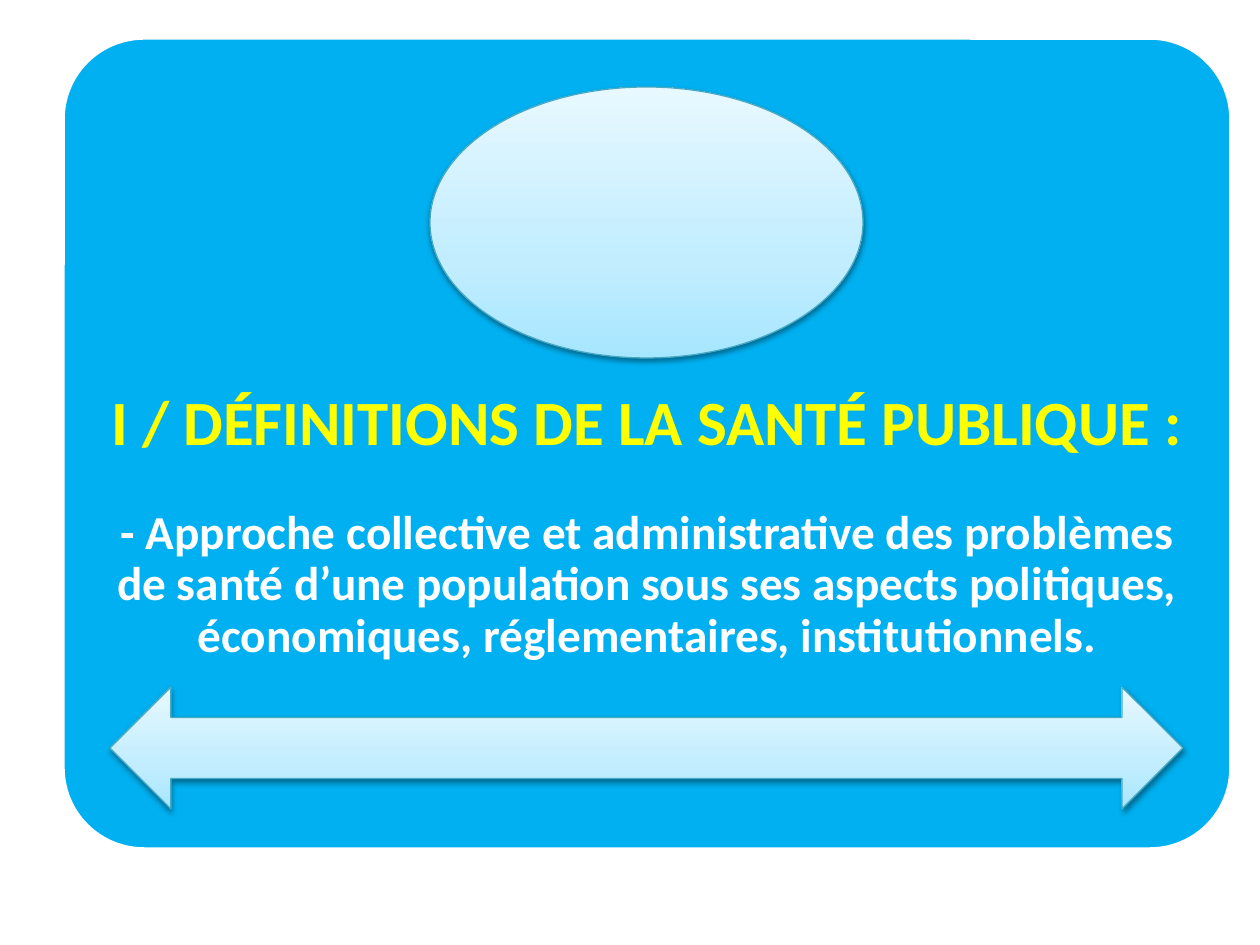
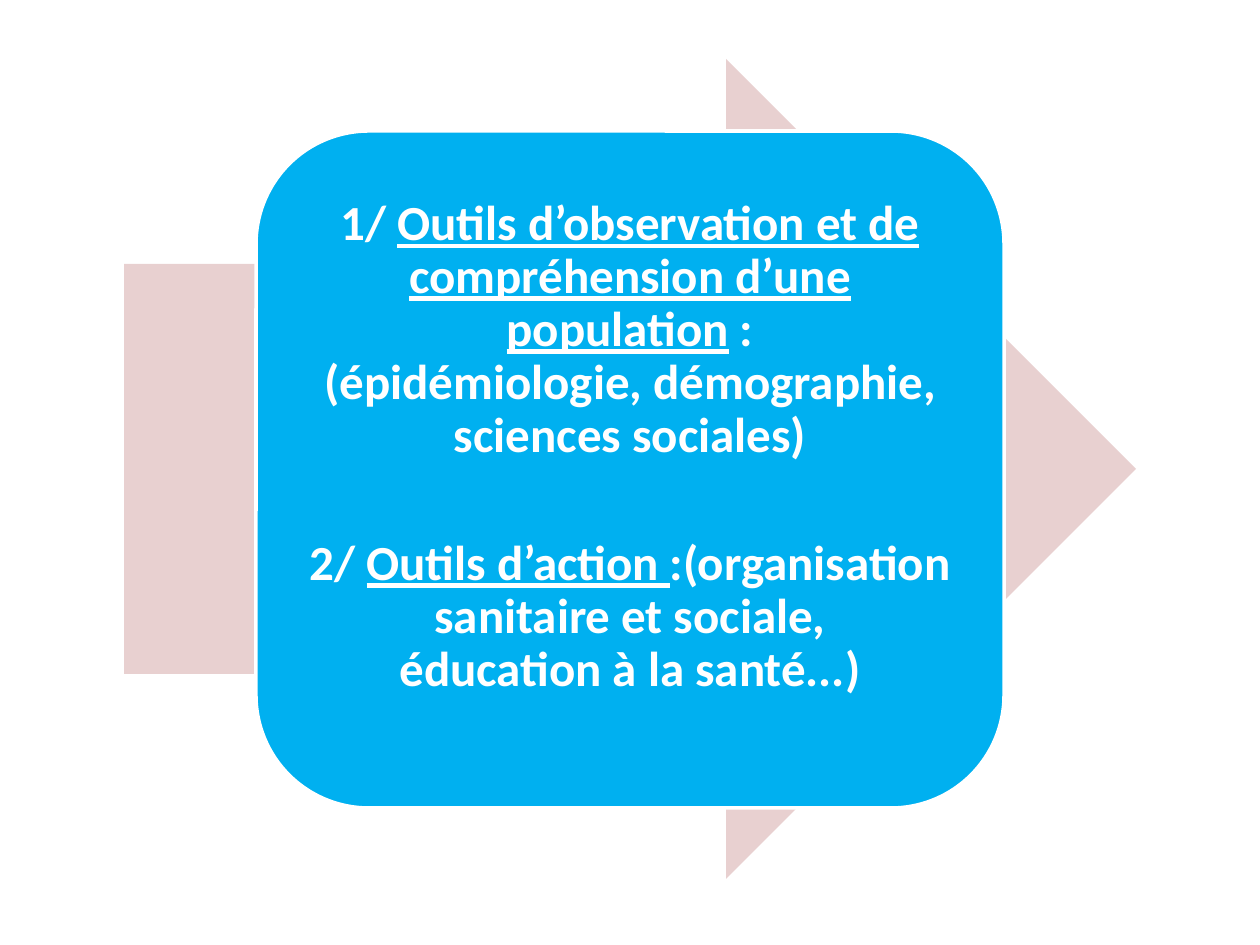
from pptx import Presentation
from pptx.dml.color import RGBColor as Rgb
from pptx.enum.shapes import MSO_SHAPE as Kind
from pptx.enum.text import MSO_ANCHOR as Anchor, MSO_AUTO_SIZE as Fit, PP_ALIGN as Align
from pptx.oxml import parse_xml as to_xml
from pptx.oxml.ns import nsdecls
from pptx.util import Pt
from lxml import etree

SCALE = 914400 / 126
FONT = "Calibri"
COLORS = {
    "panel": "00B0F0",
    "white": "FFFFFF",
    "title": "FFFF00",
    "arrow": "E8D0D0",
    "edge": "46AAC5",
    "shade": "000000",
}
GLOSS = [(0, "A7E6FF"), (35, "C1EDFF"), (100, "E7F8FF")]


def px(n):
    return round(n * SCALE)


def color(name):
    return Rgb.from_string(COLORS[name])


def place(item, box):
    item.left, item.top, item.width, item.height = map(px, box)


def add_plain(slide, kind, box, fill, edge=None):
    shape = slide.shapes.add_shape(kind, *map(px, box))
    shape.shadow.inherit = False
    shape.fill.solid()
    shape.fill.fore_color.rgb = color(fill)
    if edge:
        shape.line.color.rgb = color(edge)
        shape.line.width = Pt(2)
    else:
        shape.line.fill.background()
    return shape


def add_gloss(slide, kind, box):
    shape = slide.shapes.add_shape(kind, *map(px, box))
    shape.line.color.rgb = color("edge")
    shape.line.width = Pt(0.75)
    stops = "".join(
        f'<a:gs pos="{pos * 1000}"><a:srgbClr val="{tone}"/></a:gs>' for pos, tone in GLOSS
    )
    props = shape.element.spPr
    props.prstGeom.addnext(to_xml(
        f'<a:gradFill {nsdecls("a")} rotWithShape="1"><a:gsLst>{stops}</a:gsLst>'
        '<a:lin ang="16200000" scaled="1"/></a:gradFill>'
    ))
    props.append(to_xml(
        f'<a:effectLst {nsdecls("a")}><a:outerShdw blurRad="40000" dist="20000" dir="5400000"'
        f' rotWithShape="0"><a:srgbClr val="{COLORS["shade"]}"><a:alpha val="38000"/>'
        '</a:srgbClr></a:outerShdw></a:effectLst>'
    ))


def fill_text(holder, box, paras, size, tone, inset, anchor, gap=0):
    place(holder, box)
    holder.element.getparent().append(holder.element)
    frame = holder.text_frame
    frame.word_wrap = True
    frame.auto_size = Fit.NONE
    frame.vertical_anchor = anchor
    frame.margin_left = frame.margin_right = px(inset)
    frame.margin_top = frame.margin_bottom = 0
    for i, parts in enumerate(paras):
        para = frame.add_paragraph() if i else frame.paragraphs[0]
        props = para._p.get_or_add_pPr()
        props.set("marL", "0")
        props.set("indent", "0")
        etree.SubElement(props, "{http://schemas.openxmlformats.org/drawingml/2006/main}buNone")
        para.alignment = Align.CENTER
        para.line_spacing = 0.9
        para.space_before = Pt(gap if i else 0)
        para.font.name = FONT
        para.font.size = Pt(size)
        para.font.bold = True
        para.font.color.rgb = color(tone)
        for text, under in parts:
            for j, line in enumerate(text.split("\n")):
                if j:
                    para.add_line_break()
                run = para.add_run()
                run.text = line
                if under:
                    run.font.underline = True


def add_terms(deck):
    slide = deck.slides.add_slide(deck.slide_layouts[1])
    panel = add_plain(slide, Kind.ROUNDED_RECTANGLE, (63, 38, 1168, 811), "panel", "white")
    panel.adjustments[0] = 0.1
    add_gloss(slide, Kind.OVAL, (430, 87, 433, 271))
    add_gloss(slide, Kind.LEFT_RIGHT_ARROW, (110, 687, 1073, 122))
    title, body = slide.placeholders
    fill_text(title, (63, 391, 1168, 70),
              [[("I / DÉFINITIONS DE LA SANTÉ PUBLIQUE :", False)]],
              36, "title", 35, Anchor.TOP)
    fill_text(body, (63, 509, 1168, 158),
              [[("- Approche collective et administrative des problèmes de santé d’une population "
                 "sous ses aspects politiques, économiques, réglementaires, institutionnels.", False)]],
              27, "white", 35, Anchor.TOP)


def add_tools(deck):
    slide = deck.slides.add_slide(deck.slide_layouts[1])
    title, body = slide.placeholders
    title.element.getparent().remove(title.element)
    add_plain(slide, Kind.RIGHT_ARROW, (124, 59, 1012, 820), "arrow")
    add_plain(slide, Kind.ROUNDED_RECTANGLE, (256, 131, 748, 677), "panel", "white")
    paras = [
        [("1/ ", False),
         ("Outils d’observation et de compréhension d’une population", True),
         (" :\n(épidémiologie, démographie, sciences sociales)", False)],
        [("2/ ", False),
         ("Outils d’action ", True),
         (":(organisation sanitaire et sociale,\néducation à la santé...)", False)],
    ]
    fill_text(body, (289, 164, 682, 568), paras, 28, "white", 15, Anchor.MIDDLE, 43)


def main():
    deck = Presentation()
    deck.slide_width, deck.slide_height = px(1260), px(945)
    add_terms(deck)
    add_tools(deck)
    deck.save("out.pptx")


if __name__ == "__main__":
    main()
